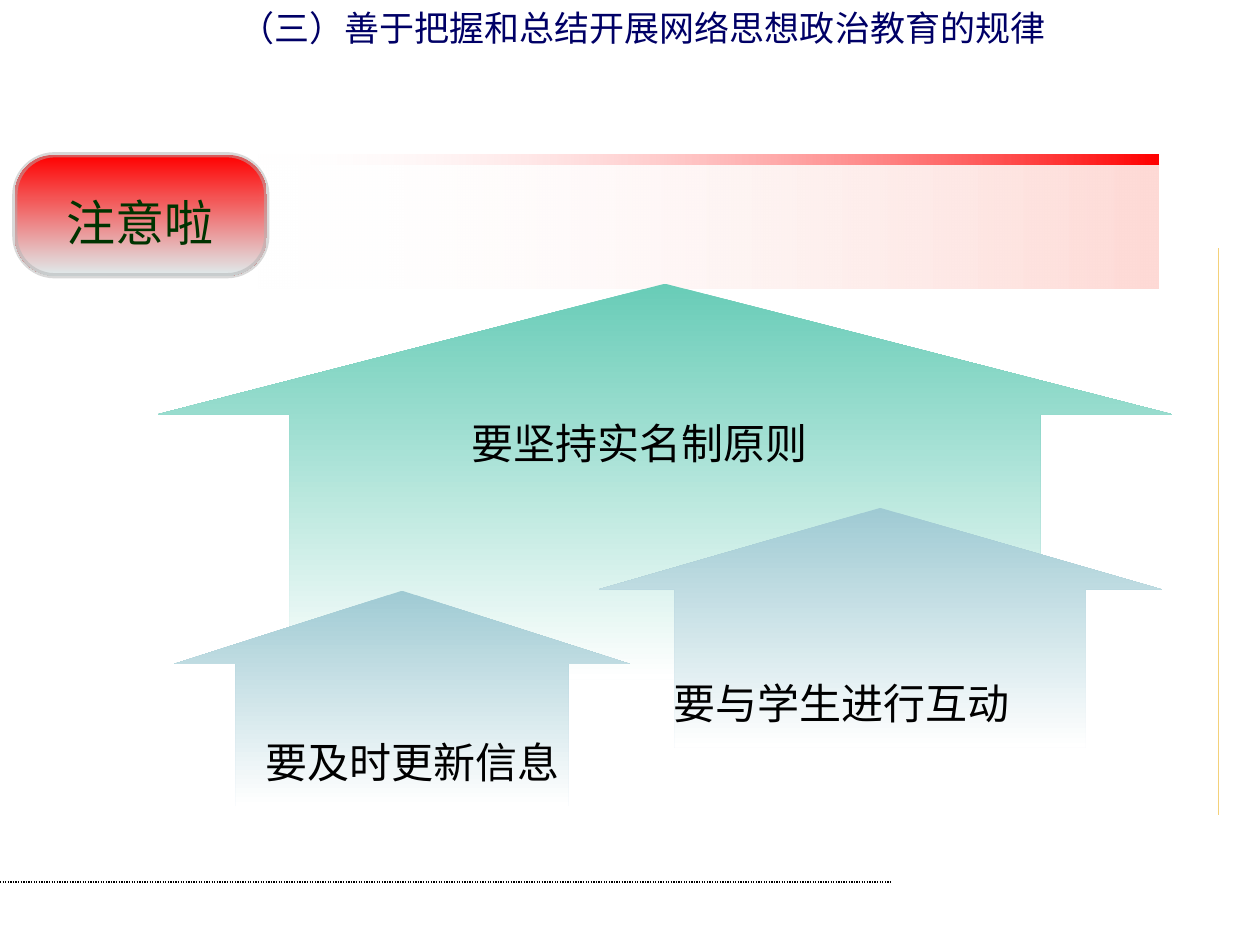
"""Build a slide on the rules of online ideological education, with three rising arrows."""
from lxml import etree
from pptx import Presentation
from pptx.dml.color import RGBColor
from pptx.enum.dml import MSO_LINE
from pptx.enum.shapes import MSO_CONNECTOR, MSO_SHAPE
from pptx.oxml.ns import qn
from pptx.util import Cm, Pt

RECTANGLE = MSO_SHAPE.RECTANGLE
ROUNDED = MSO_SHAPE.ROUNDED_RECTANGLE
UP_ARROW = MSO_SHAPE.UP_ARROW
STRAIGHT = MSO_CONNECTOR.STRAIGHT
DOTTED = MSO_LINE.ROUND_DOT
SOLID = MSO_LINE.SOLID

COLORS = {
    "black": "000000", "white": "FFFFFF", "red": "FF0000", "pink": "FEDAD6",
    "mist": "DFECED", "grey": "B2B2B2", "gold": "F4D17A", "teal": "68CCB7",
    "blue": "9FCAD3", "navy": "000066", "green": "003300",
}
SANS_SC = "Noto Sans CJK SC"
SANS_JP = "Noto Sans CJK JP"
ACROSS, DOWN = 0, 270

RULES = [
    ((0, 17.78), (17.98, 17.78), "black", DOTTED),
    ((24.56, 5), (24.56, 16.43), "gold", SOLID),
]
BANNER = [
    (RECTANGLE, (5.11, 3.12, 18.24, 0.2), ("white", "red"), ACROSS, []),
    (ROUNDED, (0.3, 3.12, 5.08, 2.44), ("red", "mist"), DOWN, [0.33]),
    (RECTANGLE, (5.11, 3.33, 18.24, 2.49), ("white", "pink"), ACROSS, []),
]
ARROWS = [
    (UP_ARROW, (3.18, 5.72, 20.45, 7.98), ("teal", "white"), DOWN, [0.74, 0.33]),
    (UP_ARROW, (3.51, 11.91, 9.19, 4.34), ("blue", "white"), DOWN, [0.73, 0.34]),
    (UP_ARROW, (12.07, 10.24, 11.35, 4.83), ("blue", "white"), DOWN, [0.73, 0.34]),
]
TEXTS = [
    ("注意啦", (1.09, 3.76, 3.81, 0.99), dict(size=28, color="green", font=SANS_SC)),
    ("要与学生进行互动", (13.13, 13.54, 7.62, 1.27), dict(indent=0.45)),
    ("要及时更新信息", (5.11, 14.73, 6.55, 1.3), {}),
    ("要坚持实名制原则", (6.1, 8.41, 14.2, 2.21), dict(indent=3.4, spacing=0.9)),
    ("（三）善于把握和总结开展网络思想政治教育的规律", (4.57, 0, 18.21, 3.02),
     dict(size=20, color="navy", font=SANS_SC)),
]


def rgb(name):
    return RGBColor.from_string(COLORS[name])


def set_alpha(color_element, percent):
    etree.SubElement(color_element, qn("a:alpha")).set("val", str(percent * 1000))


def add_rule(slide, start, end, color, dash):
    connector = slide.shapes.add_connector(STRAIGHT, *map(Cm, start + end))
    connector.line.color.rgb = rgb(color)
    connector.line.width = Pt(0.75)
    connector.line.dash_style = dash
    etree.SubElement(connector._element.spPr, qn("a:effectLst"))


def add_gradient_shape(slide, kind, box, colors, angle, adjustments):
    shape = slide.shapes.add_shape(kind, *map(Cm, box))
    shape.shadow.inherit = False
    for index, value in enumerate(adjustments):
        shape.adjustments[index] = value
    shape.fill.gradient()
    shape.fill.gradient_angle = angle
    for stop, color in zip(shape.fill.gradient_stops, colors):
        stop.color.rgb = rgb(color)
    if angle == ACROSS:
        set_alpha(next(shape._element.spPr.iter(qn("a:srgbClr"))), 0)
    if kind == ROUNDED:
        shape.line.color.rgb = rgb("grey")
        shape.line.width = Pt(3)
        set_alpha(shape._element.spPr.find(qn("a:ln")).find(".//" + qn("a:srgbClr")), 50)
    else:
        shape.line.fill.background()


def add_text(slide, text, box, size=24, color="black", font=SANS_JP, indent=0.25, spacing=None):
    frame = slide.shapes.add_textbox(*map(Cm, box)).text_frame
    frame.word_wrap = True
    frame.margin_left = Cm(indent)
    paragraph = frame.paragraphs[0]
    paragraph.line_spacing = spacing
    run = paragraph.add_run()
    run.text = text
    run.font.size = Pt(size)
    run.font.color.rgb = rgb(color)
    run.font.name = font
    etree.SubElement(run.font._element, qn("a:ea")).set("typeface", font)


def main():
    presentation = Presentation()
    presentation.slide_width, presentation.slide_height = Cm(25.4), Cm(19.05)
    slide = presentation.slides.add_slide(presentation.slide_layouts[6])
    for rule in RULES:
        add_rule(slide, *rule)
    for item in BANNER + ARROWS:
        add_gradient_shape(slide, *item)
    for text, box, style in TEXTS:
        add_text(slide, text, box, **style)
    presentation.save("out.pptx")


if __name__ == "__main__":
    main()
